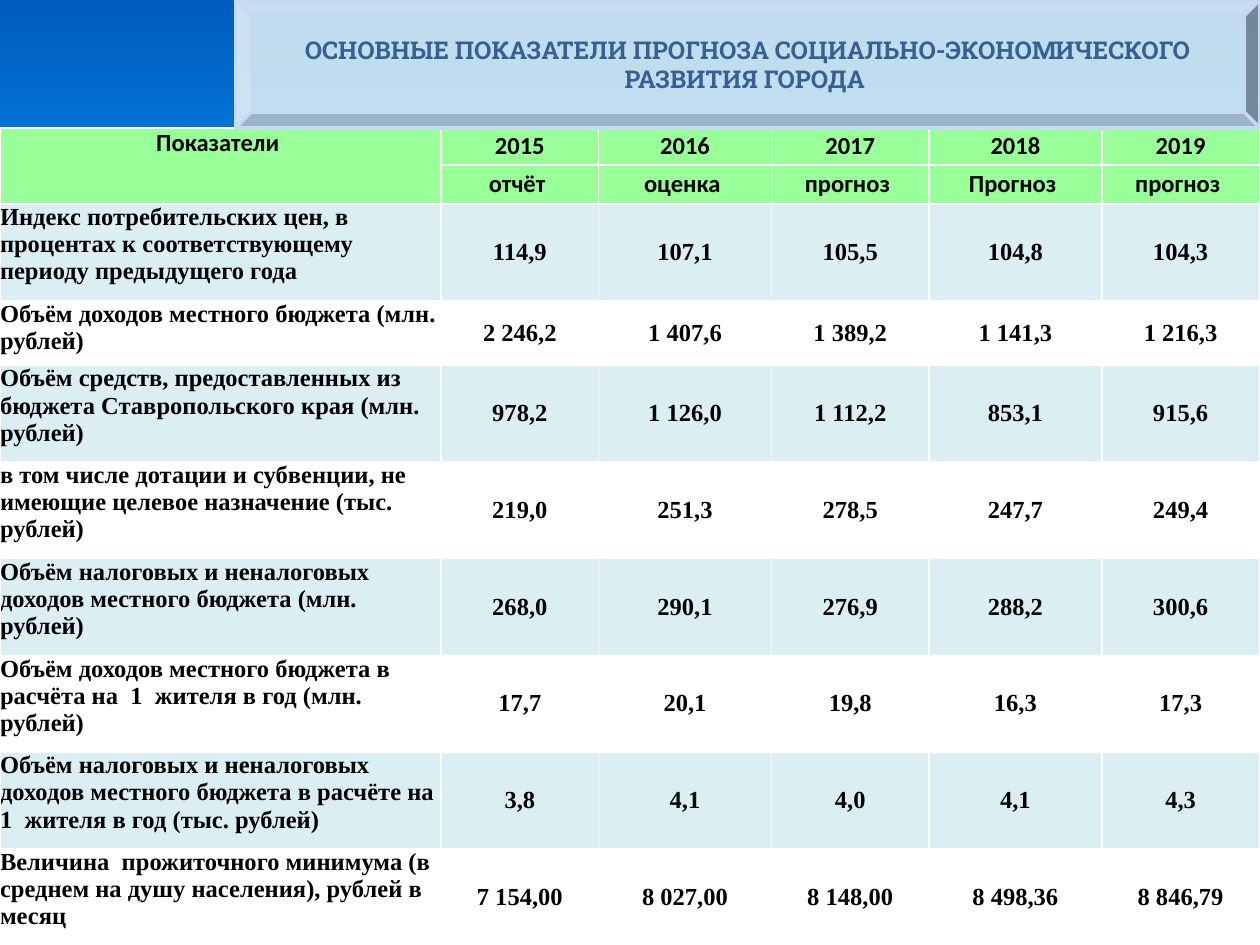
from lxml import etree
from pptx import Presentation
from pptx.dml.color import RGBColor
from pptx.enum.shapes import MSO_SHAPE
from pptx.enum.text import MSO_ANCHOR, PP_ALIGN
from pptx.oxml.ns import qn
from pptx.util import Cm, Pt

BEVEL = MSO_SHAPE.BEVEL
MIDDLE, TOP = MSO_ANCHOR.MIDDLE, MSO_ANCHOR.TOP
CENTER, LEFT = PP_ALIGN.CENTER, PP_ALIGN.LEFT

TITLE = "ОСНОВНЫЕ ПОКАЗАТЕЛИ ПРОГНОЗА СОЦИАЛЬНО-ЭКОНОМИЧЕСКОГО РАЗВИТИЯ ГОРОДА "
HEADER = [
    ("Показатели ", "2015", "2016", "2017", "2018", "2019"),
    ("", "отчёт ", "оценка ", "прогноз ", "Прогноз ", "прогноз "),
]
INDICATORS = [
    ("Индекс потребительских цен, в процентах к соответствующему периоду предыдущего года",
     "114,9", "107,1", "105,5", "104,8", "104,3"),
    ("Объём доходов местного бюджета (млн. рублей)",
     "2 246,2", "1 407,6", "1 389,2", "1 141,3", "1 216,3"),
    ("Объём средств, предоставленных из бюджета Ставропольского края (млн. рублей)",
     "978,2", "1 126,0", "1 112,2", "853,1", "915,6"),
    ("в том числе дотации и субвенции, не имеющие целевое назначение (тыс. рублей)",
     "219,0", "251,3", "278,5", "247,7", "249,4"),
    ("Объём налоговых и неналоговых доходов местного бюджета (млн. рублей)",
     "268,0", "290,1", "276,9", "288,2", "300,6"),
    ("Объём доходов местного бюджета в расчёта на  1  жителя в год (млн. рублей)",
     "17,7", "20,1", "19,8", "16,3", "17,3"),
    ("Объём налоговых и неналоговых доходов местного бюджета в расчёте на  1  жителя в год (тыс. рублей)",
     "3,8", "4,1", "4,0", "4,1", "4,3"),
    ("Величина  прожиточного минимума (в среднем на душу населения), рублей в месяц",
     "7 154,00", "8 027,00", "8 148,00", "8 498,36", "8 846,79"),
]
COLUMN_WIDTHS = (8.89, 3.18, 3.48, 3.18, 3.48, 3.18)
ROW_HEIGHTS = (0.74, 0.79, 1.95, 1.3) + (1.95,) * 6
ROWS_ABOVE_THICK_RULE = (0, 3, 8)
BANNER_LEFT, BANNER_HEIGHT = 4.75, 2.58
SLIDE_WIDTH, SLIDE_HEIGHT = 25.4, 19.05

THEME = {
    "background": [(0, "03D4A8"), (25, "21D6E0"), (75, "0087E6"), (100, "005CBF")],
    "header": "99FF99",
    "bands": ("DBEEF4", "FFFFFF"),
    "rule": "FFFFFF",
    "text": "000000",
    "banner": "DBEEF4",
    "banner_opacity": 88,
    "banner_line": "C6D9F1",
    "title": "376092",
    "title_font": "Roboto Slab",
    "header_font": "Calibri",
    "body_font": "Times New Roman",
    "size": 14,
    "rule_width": 1,
    "thick_rule_width": 1.5,
    "banner_line_width": 2,
}


def add_text(frame, text, align, font_name, color):
    """Write one bold run into the first paragraph of a text frame."""
    paragraph = frame.paragraphs[0]
    paragraph.alignment = align
    run = paragraph.add_run()
    run.text = text
    run.font.name = font_name
    run.font.size = Pt(THEME["size"])
    run.font.bold = True
    run.font.color.rgb = RGBColor.from_string(color)


def paint_background(slide):
    """Fill the slide with a gradient running from bottom to top."""
    fill = slide.background.fill
    fill.gradient()
    fill.gradient_angle = 90
    stops = next(slide.element.iter(qn("a:gsLst")))
    for stop in list(stops):
        stops.remove(stop)
    for position, color in THEME["background"]:
        stop = etree.SubElement(stops, qn("a:gs"), pos=str(position * 1000))
        etree.SubElement(stop, qn("a:srgbClr"), val=color)


def rule_cell(cell, row):
    """Draw the four borders of a cell, before its fill is set."""
    thick_sides = {
        "a:lnT": row - 1 in ROWS_ABOVE_THICK_RULE,
        "a:lnB": row in ROWS_ABOVE_THICK_RULE,
    }
    properties = cell._tc.get_or_add_tcPr()
    for side in ("a:lnL", "a:lnR", "a:lnT", "a:lnB"):
        width = THEME["thick_rule_width" if thick_sides.get(side) else "rule_width"]
        line = etree.SubElement(properties, qn(side), w=str(Pt(width)))
        solid = etree.SubElement(line, qn("a:solidFill"))
        etree.SubElement(solid, qn("a:srgbClr"), val=THEME["rule"])


def add_indicators(slide):
    """Add the table of indicators by year."""
    content = HEADER + INDICATORS
    table = slide.shapes.add_table(
        len(content), len(COLUMN_WIDTHS), Cm(0), Cm(BANNER_HEIGHT),
        Cm(sum(COLUMN_WIDTHS)), Cm(sum(ROW_HEIGHTS))).table
    table.first_row = table.horz_banding = False
    for column, width in zip(table.columns, COLUMN_WIDTHS):
        column.width = Cm(width)
    for row, height in zip(table.rows, ROW_HEIGHTS):
        row.height = Cm(height)
    table.cell(0, 0).merge(table.cell(1, 0))

    for r, values in enumerate(content):
        in_header = r < len(HEADER)
        color = THEME["header"] if in_header else THEME["bands"][(r - len(HEADER)) % 2]
        font_name = THEME["header_font" if in_header else "body_font"]
        for c, value in enumerate(values):
            cell = table.cell(r, c)
            cell.margin_left = cell.margin_right = cell.margin_top = cell.margin_bottom = 0
            cell.vertical_anchor = MIDDLE if c else TOP
            rule_cell(cell, r)
            cell.fill.solid()
            cell.fill.fore_color.rgb = RGBColor.from_string(color)
            if value:
                align = CENTER if c or in_header else LEFT
                add_text(cell.text_frame, value, align, font_name, THEME["text"])


def add_banner(slide):
    """Add the bevelled title banner."""
    banner = slide.shapes.add_shape(
        BEVEL, Cm(BANNER_LEFT), Cm(0), Cm(SLIDE_WIDTH - BANNER_LEFT), Cm(BANNER_HEIGHT))
    banner.shadow.inherit = False
    banner.fill.solid()
    banner.fill.fore_color.rgb = RGBColor.from_string(THEME["banner"])
    tint = next(banner.element.spPr.iter(qn("a:srgbClr")))
    etree.SubElement(tint, qn("a:alpha"), val=str(THEME["banner_opacity"] * 1000))
    banner.line.color.rgb = RGBColor.from_string(THEME["banner_line"])
    banner.line.width = Pt(THEME["banner_line_width"])
    banner.text_frame.word_wrap = True
    banner.text_frame.vertical_anchor = MIDDLE
    add_text(banner.text_frame, TITLE, CENTER, THEME["title_font"], THEME["title"])


def main():
    """Build the slide and save it."""
    deck = Presentation()
    deck.slide_width, deck.slide_height = Cm(SLIDE_WIDTH), Cm(SLIDE_HEIGHT)
    slide = deck.slides.add_slide(deck.slide_layouts[6])
    paint_background(slide)
    add_indicators(slide)
    add_banner(slide)
    deck.save("out.pptx")


if __name__ == "__main__":
    main()
